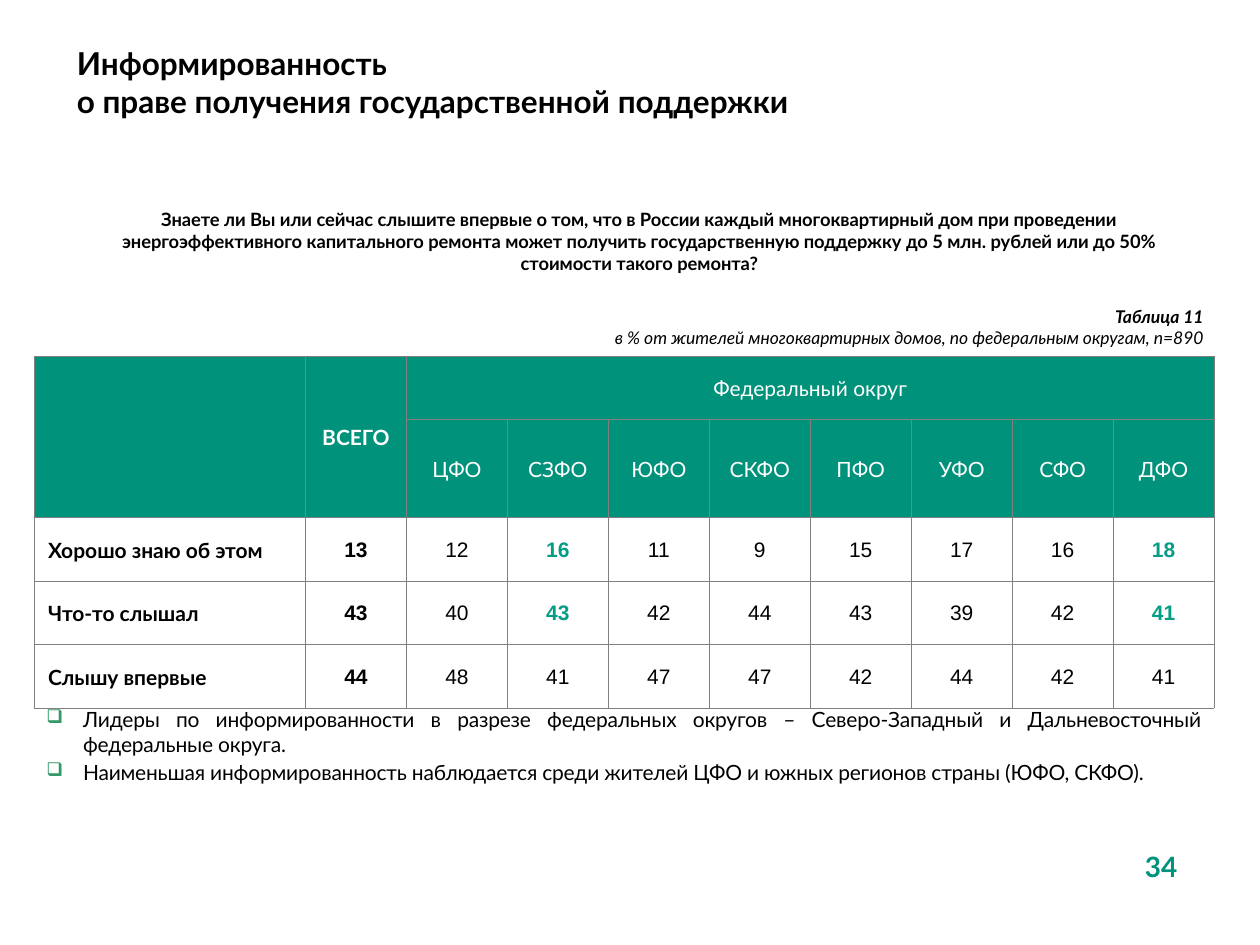
from typing import NamedTuple

from lxml import etree
from pptx import Presentation
from pptx.dml.color import RGBColor
from pptx.enum import text
from pptx.oxml.ns import qn
from pptx.util import Pt

COLORS = {
    "ink": "000000",
    "white": "FFFFFF",
    "green": "00927B",
    "leader": "059D85",
    "bullet": "339966",
    "grid": "808080",
}
LEFT, CENTER, RIGHT, JUSTIFY = (
    text.PP_ALIGN.LEFT, text.PP_ALIGN.CENTER, text.PP_ALIGN.RIGHT, text.PP_ALIGN.JUSTIFY)


class Line(NamedTuple):
    words: str
    size: float
    color: str = "ink"
    bold: bool = False
    italic: bool = False
    face: str = "Lato"
    align: text.PP_ALIGN = LEFT


class Box(NamedTuple):
    left: float
    top: float
    width: float
    height: float
    lines: list[Line]


class Answer(NamedTuple):
    label: str
    total: int
    by_district: list[int]
    leaders: tuple[str, ...] = ()


DISTRICTS = ["ЦФО", "СЗФО", "ЮФО", "СКФО", "ПФО", "УФО", "СФО", "ДФО"]
LEADERS = ("СЗФО", "ДФО")
ANSWERS = [
    Answer("Хорошо знаю об этом", 13, [12, 16, 11, 9, 15, 17, 16, 18], LEADERS),
    Answer("Что-то слышал", 43, [40, 43, 42, 44, 43, 39, 42, 41], LEADERS),
    Answer("Слышу впервые", 44, [48, 41, 47, 47, 42, 44, 42, 41]),
]

TITLE = Line("Информированность\vо праве получения государственной поддержки", 18, bold=True)
QUESTION = Box(36.7, 127.4, 657.4, 45.4, [Line(
    "Знаете ли Вы или сейчас слышите впервые о том, что в России каждый многоквартирный дом "
    "при проведении энергоэффективного капитального ремонта может получить государственную "
    "поддержку до 5 млн. рублей или до 50% стоимости такого ремонта?",
    10.5, bold=True, align=CENTER)])
CAPTION = Box(59, 171.4, 635.8, 43.9, [
    Line("Таблица 11", 10, bold=True, italic=True, align=RIGHT),
    Line("в % от жителей многоквартирных домов, по федеральным округам, n=890",
         10, italic=True, align=RIGHT),
])
FINDINGS = Box(19.4, 400.3, 674.6, 54, [
    Line("Лидеры по информированности в разрезе федеральных округов – Северо-Западный "
         "и Дальневосточный федеральные округа.", 12, align=JUSTIFY),
    Line("Наименьшая информированность наблюдается среди жителей ЦФО и южных регионов "
         "страны (ЮФО, СКФО).", 12, align=JUSTIFY),
])
PAGE_NUMBER = Box(632.2, 481.7, 62.6, 37.4, [
    Line("34", 16, "green", bold=True, align=CENTER)])


def rgb(name: str) -> RGBColor:
    return RGBColor.from_string(COLORS[name])


def write(frame, lines: list[Line]) -> None:
    for index, line in enumerate(lines):
        paragraph = frame.paragraphs[0] if index == 0 else frame.add_paragraph()
        paragraph.text = line.words
        paragraph.alignment = line.align
        formats = {"size": Pt(line.size), "name": line.face,
                   "bold": line.bold, "italic": line.italic}
        for run in paragraph.runs:
            for attribute, value in formats.items():
                setattr(run.font, attribute, value)
            run.font.color.rgb = rgb(line.color)


def add_box(slide, box: Box):
    frame = slide.shapes.add_textbox(*map(Pt, box[:4])).text_frame
    frame.word_wrap = True
    write(frame, box.lines)
    return frame


def add_bullets(frame) -> None:
    """Give every paragraph a hanging square bullet and slightly tight letters."""
    for index, paragraph in enumerate(frame.paragraphs):
        properties = paragraph._p.get_or_add_pPr()
        properties.set("marL", str(Pt(21)))
        properties.set("indent", str(-Pt(21)))
        if index:
            paragraph.space_before = Pt(1.2)
        color = etree.SubElement(properties, qn("a:buClr"))
        etree.SubElement(color, qn("a:srgbClr"), val=COLORS["bullet"])
        etree.SubElement(properties, qn("a:buSzPct"), val="90000")
        etree.SubElement(properties, qn("a:buChar"), char="❑")
        for run in paragraph.runs:
            run.font._element.set("spc", "-10")


def style_cell(cell, header: bool) -> None:
    formats = {"margin_left": Pt(0.7), "margin_right": Pt(0.7), "margin_top": Pt(0.7),
               "margin_bottom": 0, "vertical_anchor": text.MSO_ANCHOR.MIDDLE}
    for attribute, value in formats.items():
        setattr(cell, attribute, value)
    properties = cell._tc.get_or_add_tcPr()
    for side in ("lnL", "lnR", "lnT", "lnB"):
        border = etree.SubElement(properties, qn(f"a:{side}"), w=str(Pt(0.25)))
        fill = etree.SubElement(border, qn("a:solidFill"))
        etree.SubElement(fill, qn("a:srgbClr"), val=COLORS["grid"])
    if header:
        cell.fill.solid()
        cell.fill.fore_color.rgb = rgb("green")
    else:
        cell.fill.background()


def add_awareness_table(slide) -> None:
    widths = [155] + [57.7] * (1 + len(DISTRICTS))
    heights = [36, 56] + [36.3] * len(ANSWERS)
    table = slide.shapes.add_table(
        len(heights), len(widths), Pt(19.6), Pt(203.8), Pt(sum(widths)), Pt(sum(heights))).table
    table.first_row = table.horz_banding = False
    for column, width in zip(table.columns, widths):
        column.width = Pt(width)
    for row_index, (row, height) in enumerate(zip(table.rows, heights)):
        row.height = Pt(height)
        for cell in row.cells:
            style_cell(cell, header=row_index < 2)

    def put(row: int, column: int, words, color: str = "white", **options) -> None:
        options = {"align": CENTER, **options}
        write(table.cell(row, column).text_frame, [Line(str(words), 12, color, **options)])

    for column in (0, 1):
        table.cell(0, column).merge(table.cell(1, column))
    table.cell(0, 2).merge(table.cell(0, len(widths) - 1))
    put(0, 1, "ВСЕГО", bold=True)
    put(0, 2, "Федеральный округ")
    for column, district in enumerate(DISTRICTS, 2):
        put(1, column, district)

    for row, answer in enumerate(ANSWERS, 2):
        put(row, 0, answer.label, "ink", bold=True, align=LEFT)
        label = table.cell(row, 0).text_frame.paragraphs[0]
        label._p.get_or_add_pPr().set("marL", str(Pt(7.2)))
        put(row, 1, answer.total, "ink", bold=True, face="Arial")
        for column, (district, share) in enumerate(zip(DISTRICTS, answer.by_district), 2):
            leads = district in answer.leaders
            put(row, column, share, "leader" if leads else "ink", bold=leads, face="Arial")


def place_title(slide) -> None:
    title = slide.shapes.title
    places = {"left": 36.7, "top": 21.6, "width": 550.8, "height": 51.1}
    for attribute, value in places.items():
        setattr(title, attribute, Pt(value))
    frame = title.text_frame
    frame.auto_size = text.MSO_AUTO_SIZE.NONE
    frame.vertical_anchor = text.MSO_ANCHOR.TOP
    write(frame, [TITLE])


def main() -> None:
    deck = Presentation()
    deck.slide_width, deck.slide_height = Pt(720), Pt(540)
    slide = deck.slides.add_slide(deck.slide_layouts[5])
    place_title(slide)
    add_bullets(add_box(slide, FINDINGS))
    add_awareness_table(slide)
    add_box(slide, CAPTION)
    add_box(slide, PAGE_NUMBER)
    question = add_box(slide, QUESTION)
    question.vertical_anchor = text.MSO_ANCHOR.BOTTOM
    question.margin_bottom = Pt(16.2)
    deck.save("out.pptx")


if __name__ == "__main__":
    main()
